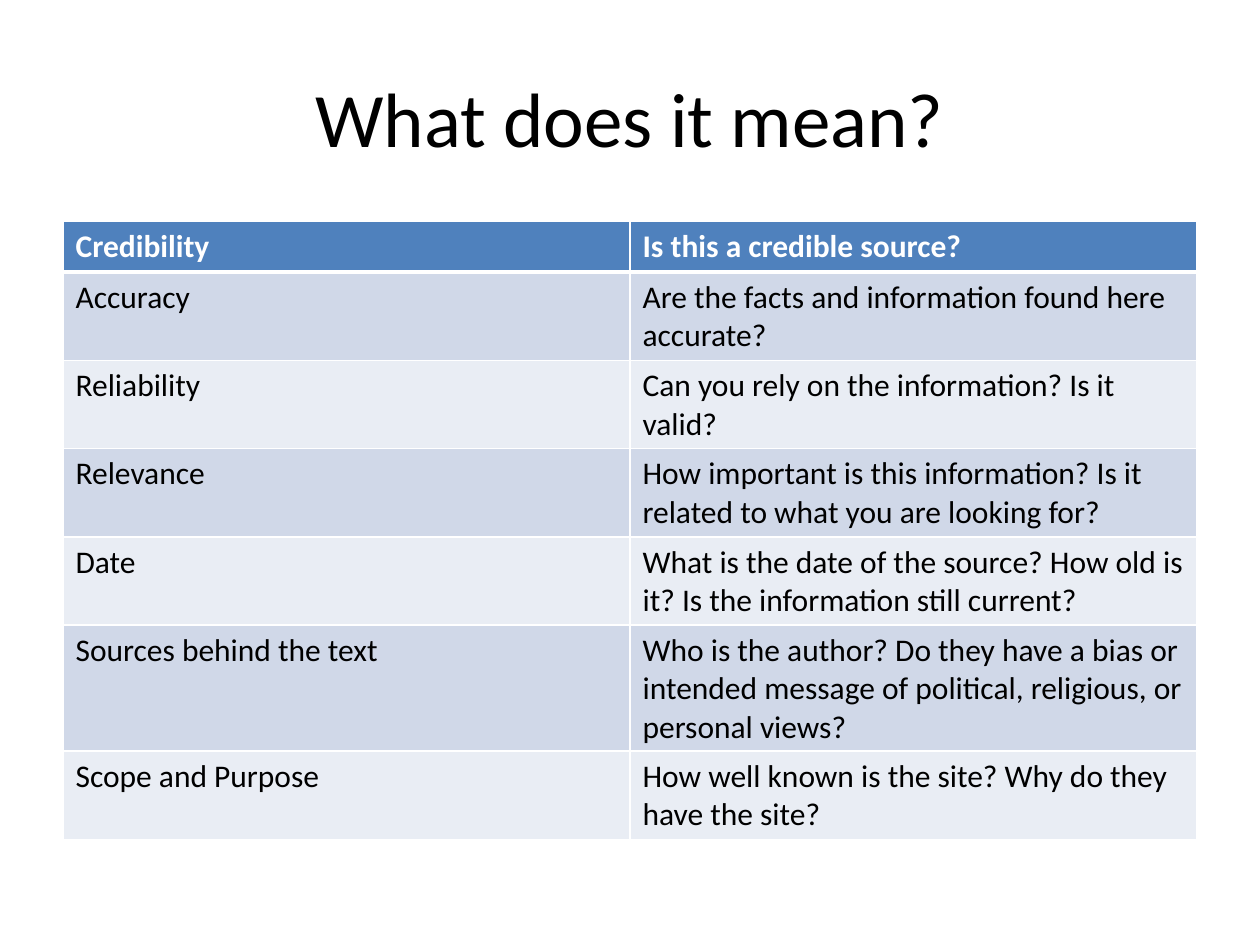
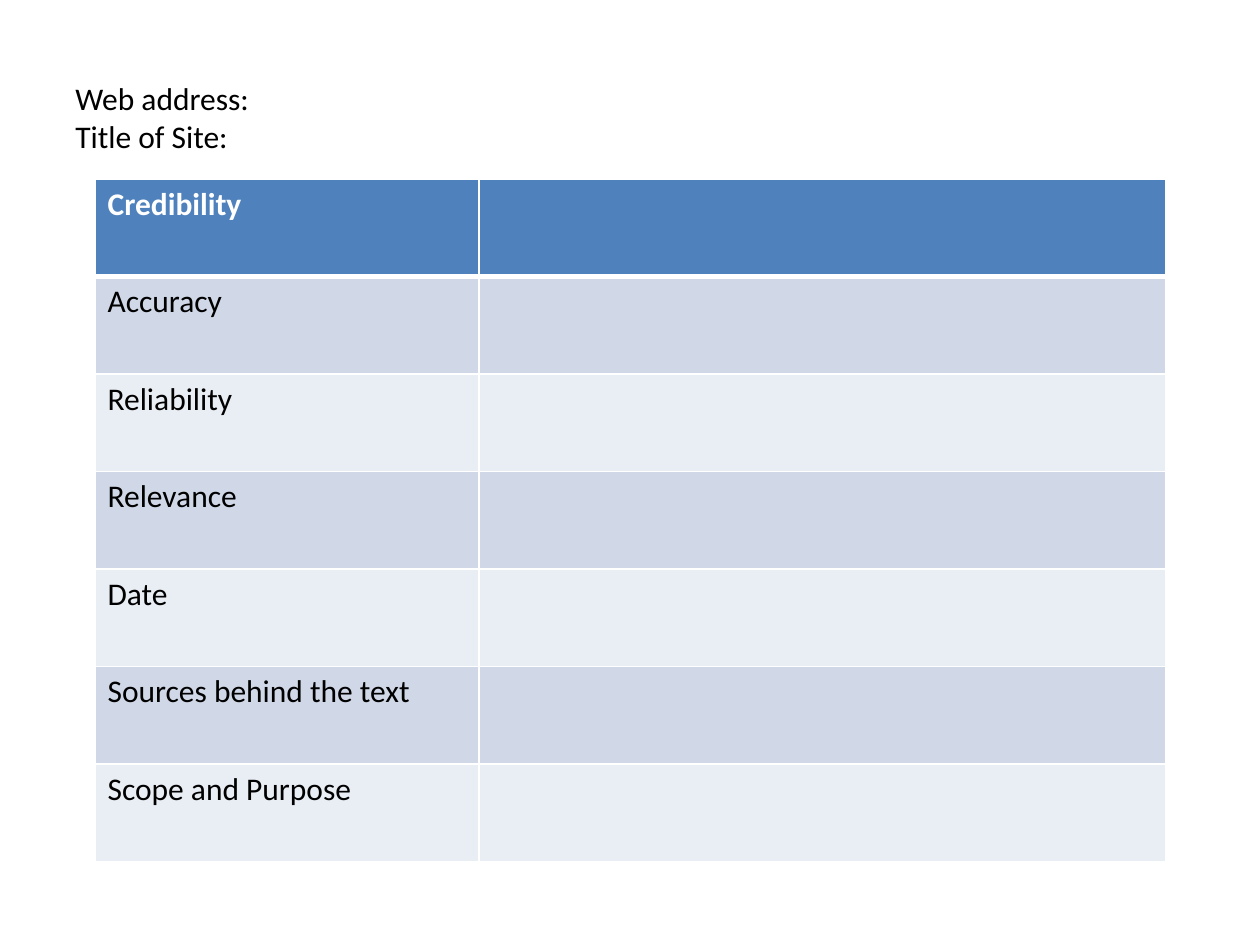
from lxml.etree import SubElement
from pptx import Presentation
from pptx.dml.color import RGBColor
from pptx.enum.text import MSO_ANCHOR, PP_ALIGN
from pptx.oxml.ns import qn
from pptx.util import Pt

PX = 914400 / 126
FONT = "Calibri"
COLORS = {
    "text": "000000",
    "paper": "FFFFFF",
    "header": "4F81BD",
    "odd": "D0D8E8",
    "even": "E9EDF4",
}
TITLE_AREA = (63, 38, 1134, 157)
CRITERIA = [
    ("Credibility", "Is this a credible source?"),
    ("Accuracy", "Are the facts and information found here accurate?"),
    ("Reliability", "Can you rely on the information? Is it valid?"),
    ("Relevance", "How important is this information? Is it related to what you are looking for?"),
    ("Date", "What is the date of the source? How old is it? Is the information still current?"),
    ("Sources behind the text", "Who is the author? Do they have a bias or intended message of "
                                "political, religious, or personal views?"),
    ("Scope and Purpose", "How well known is the site? Why do they have the site?"),
]


def emu(pixels):
    """Turn px into EMU."""
    return round(pixels * PX)


def write_text(frame, text, size=18, color="text", bold=False, align=PP_ALIGN.LEFT):
    """Write one paragraph, with \\v as a line break, in the given format."""
    para = frame.paragraphs[0]
    para.text = text
    para.alignment = align
    for span in para.runs:
        span.font.name = FONT
        span.font.size = Pt(size)
        span.font.bold = bold
        span.font.color.rgb = RGBColor.from_string(COLORS[color])


def add_page(deck):
    """Add a blank page with the shared background."""
    page = deck.slides.add_slide(deck.slide_layouts[6])
    page.background.fill.solid()
    page.background.fill.fore_color.rgb = RGBColor.from_string(COLORS["paper"])
    return page


def add_title(page, text, **text_format):
    """Add the title box, centred vertically in its area."""
    box = page.shapes.add_textbox(*map(emu, TITLE_AREA))
    box.text_frame.word_wrap = True
    box.text_frame.vertical_anchor = MSO_ANCHOR.MIDDLE
    write_text(box.text_frame, text, **text_format)


def add_borders(cell, top=1, bottom=1):
    """Draw white borders of the given point widths around a cell."""
    properties = cell._tc.get_or_add_tcPr()
    widths = {"lnL": 1, "lnR": 1, "lnT": top, "lnB": bottom}
    for side, width in widths.items():
        line = SubElement(properties, qn(f"a:{side}"), w=str(Pt(width)))
        fill = SubElement(line, qn("a:solidFill"))
        SubElement(fill, qn("a:srgbClr"), val=COLORS["paper"])


def add_criteria_table(page, rows, left, top, column_widths, height):
    """Add a banded table with equal rows and a heavier line under its header."""
    frame = page.shapes.add_table(
        len(rows), len(column_widths),
        emu(left), emu(top), emu(sum(column_widths)), emu(height))
    table = frame.table
    table.first_row = table.horz_banding = False
    for column, width in zip(table.columns, column_widths):
        column.width = emu(width)
    for row_number, texts in enumerate(rows):
        table.rows[row_number].height = emu(height / len(rows))
        is_header = row_number == 0
        band = "header" if is_header else ("even", "odd")[row_number % 2]
        for column_number, text in enumerate(texts):
            cell = table.cell(row_number, column_number)
            add_borders(cell, top=3 if row_number == 1 else 1, bottom=3 if is_header else 1)
            cell.fill.solid()
            cell.fill.fore_color.rgb = RGBColor.from_string(COLORS[band])
            if text:
                write_text(cell.text_frame, text, bold=is_header,
                           color="paper" if is_header else "text")


def main():
    """Build the explanation page and the worksheet page."""
    deck = Presentation()
    deck.slide_width, deck.slide_height = emu(1260), emu(945)

    meaning = add_page(deck)
    add_title(meaning, "What does it mean?", size=44, align=PP_ALIGN.CENTER)
    add_criteria_table(meaning, CRITERIA, 63, 221, (567, 567), 358)

    worksheet = add_page(deck)
    blank_answers = [(name, "") for name, question in CRITERIA]
    add_criteria_table(worksheet, blank_answers, 95, 179, (384, 687), 683)
    add_title(worksheet, "Web address:\vTitle of Site:")

    deck.save("out.pptx")


if __name__ == "__main__":
    main()
